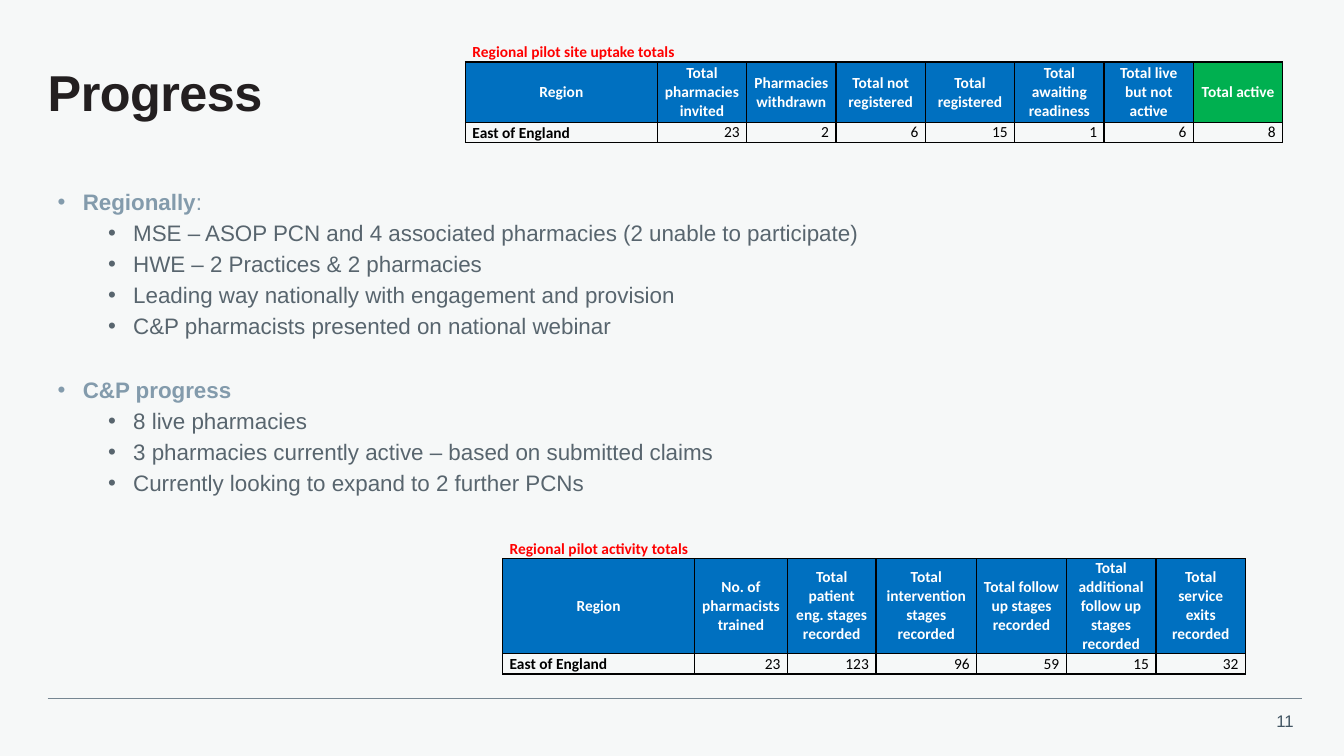
from lxml import etree
from pptx import Presentation, util as u
from pptx.dml.color import RGBColor
from pptx.enum import shapes, text
from pptx.oxml import ns

HUES = {"page": "F6F8F8", "ink": "231F20", "head": "839BAC", "body": "58656E",
        "num": "425563", "rule": "768692", "blue": "0070C0", "green": "00B050",
        "red": "FF0000", "white": "FFFFFF", "black": "000000"}
LEFT, MID, RIGHT = text.PP_ALIGN.LEFT, text.PP_ALIGN.CENTER, text.PP_ALIGN.RIGHT


class Deck:
    """Draws styled elements on one slide, with lengths in percent of its size."""

    def __init__(self, wide, high):
        self.prs = Presentation()
        self.prs.slide_width, self.prs.slide_height = u.Inches(wide), u.Inches(high)
        self.slide = self.prs.slides.add_slide(self.prs.slide_layouts[6])
        self.paint(self.slide.background.fill, "page")

    def col(self, share):
        return round(self.prs.slide_width * share / 100)

    def row(self, share):
        return round(self.prs.slide_height * share / 100)

    def place(self, x, y, w, h):
        return self.col(x), self.row(y), self.col(w), self.row(h)

    def paint(self, fill, hue):
        fill.solid()
        fill.fore_color.rgb = RGBColor.from_string(HUES[hue])

    def style(self, para, size, hue, bold=None, face="Arial", align=LEFT):
        para.alignment = align
        font = para.font
        font.name, font.size, font.bold = face, u.Pt(size), bold
        font.color.rgb = RGBColor.from_string(HUES[hue])

    def frame(self, *area):
        frame = self.slide.shapes.add_textbox(*self.place(*area)).text_frame
        frame.word_wrap = True
        return frame

    def title(self, words, *area):
        frame = self.frame(*area)
        frame.margin_left = frame.margin_right = frame.margin_top = frame.margin_bottom = 0
        frame.vertical_anchor = text.MSO_ANCHOR.MIDDLE
        para = frame.paragraphs[0]
        run = para.add_run()
        run.text = words
        run._r.get_or_add_rPr().set("spc", "-40")
        para.line_spacing = 0.9
        self.style(para, 36, "ink", True)

    def label(self, words, *area):
        para = self.frame(*area).paragraphs[0]
        para.text = words
        self.style(para, 12, "num", align=RIGHT)

    def rule(self, x, y, w):
        line = self.slide.shapes.add_connector(
            shapes.MSO_CONNECTOR.STRAIGHT, *self.place(x, y, x + w, y))
        line.line.width = u.Pt(0.5)
        line.line.color.rgb = RGBColor.from_string(HUES["rule"])
        etree.SubElement(line._element.spPr, ns.qn("a:effectLst"))

    def bullet(self, para, inset):
        props = para._p.get_or_add_pPr()
        props.set("marL", str(u.Inches(inset)))
        props.set("indent", str(u.Inches(-0.25)))
        etree.SubElement(props, ns.qn("a:buFont")).set("typeface", "Arial")
        etree.SubElement(props, ns.qn("a:buChar")).set("char", "•")

    def bullets(self, groups, *area):
        frame = self.frame(*area)
        para = frame.paragraphs[0]
        for spot, (head, tail, items) in enumerate(groups):
            if spot:
                para = frame.add_paragraph()
            para.line_spacing, para.space_before = 0.9, u.Pt(28 if spot else 0)
            self.bullet(para, 0.25)
            self.style(para, 16, "head")
            run = para.add_run()
            run.text, run.font.bold = head, True
            if tail:
                para.add_run().text = tail
            for item in items:
                para = frame.add_paragraph()
                para.text, para.level = item, 1
                para.line_spacing, para.space_before = 0.9, u.Pt(5)
                self.bullet(para, 0.75)
                self.style(para, 16, "body")

    def edge(self, cell, sides):
        props = cell._tc.get_or_add_tcPr()
        for spot, side in enumerate(sides):
            line = etree.Element(ns.qn("a:ln" + side), w=str(u.Pt(1)))
            fill = etree.SubElement(line, ns.qn("a:solidFill"))
            etree.SubElement(fill, ns.qn("a:srgbClr")).set("val", HUES["black"])
            props.insert(spot, line)

    def cell(self, cell, words, hue, fill=None, bold=True, align=LEFT, low=False, sides="LRTB"):
        cell.margin_left = cell.margin_right = u.Inches(0.07)
        cell.margin_top = cell.margin_bottom = 0
        cell.vertical_anchor = text.MSO_ANCHOR.BOTTOM if low else text.MSO_ANCHOR.MIDDLE
        para = cell.text_frame.paragraphs[0]
        para.text = words
        self.style(para, 11, hue, bold, "Calibri", align)
        if fill:
            self.paint(cell.fill, fill)
        else:
            cell.fill.background()
        self.edge(cell, sides)

    def table(self, name, data, x, y, cols, rows, accent=None):
        heads = list(data)
        grid = self.slide.shapes.add_table(
            3, len(cols), *self.place(x, y, sum(cols), sum(rows))).table
        grid.first_row = grid.horz_banding = False
        plain = "{2D5ABB26-0587-4C30-8999-92F81FD0307C}"
        grid._tbl.tblPr.find(ns.qn("a:tableStyleId")).text = plain
        for part, share in zip(grid.columns, cols):
            part.width = self.col(share)
        for part, share in zip(grid.rows, rows):
            part.height = self.row(share)
        for spot, head in enumerate(heads):
            self.cell(grid.cell(0, spot), "" if spot else name, "red", low=True, sides="B")
            self.cell(grid.cell(1, spot), head, "white",
                      "green" if head == accent else "blue", align=MID)
            self.cell(grid.cell(2, spot), str(data[head]), "black", bold=not spot,
                      align=RIGHT if spot else LEFT, low=not spot)
        grid.cell(0, 0).merge(grid.cell(0, len(cols) - 1))


UPTAKE = {"Region": "East of England", "Total pharmacies invited": 23,
          "Pharmacies withdrawn": 2, "Total not registered": 6, "Total registered": 15,
          "Total awaiting readiness": 1, "Total live but not active": 6, "Total active": 8}
ACTIVE = {"Region": "East of England", "No. of pharmacists trained": 23,
          "Total patient eng. stages recorded": 123,
          "Total intervention stages recorded": 96, "Total follow up stages recorded": 59,
          "Total additional follow up stages recorded": 15,
          "Total service exits recorded": 32}
NOTES = [
    ("Regionally", ":", [
        "MSE – ASOP PCN and 4 associated pharmacies (2 unable to participate)",
        "HWE – 2 Practices & 2 pharmacies",
        "Leading way nationally with engagement and provision",
        "C&P pharmacists presented on national webinar"]),
    ("C&P progress", "", [
        "8 live pharmacies",
        "3 pharmacies currently active – based on submitted claims",
        "Currently looking to expand to 2 further PCNs"]),
]


def main():
    deck = Deck(13.33, 7.5)
    deck.label("11", 93.9, 93.3, 3.1, 4)
    deck.rule(3.55, 92.4, 93.3)
    deck.title("Progress", 3.55, 6.25, 93.5, 12.6)
    deck.bullets(NOTES, 3.55, 24.6, 87.3, 42)
    deck.table("Regional pilot site uptake totals", UPTAKE, 34.63, 3.4,
               [14.28] + [6.65] * 7, [4.8, 8, 2.7], "Total active")
    deck.table("Regional pilot activity totals", ACTIVE, 37.4, 71.2,
               [14.28, 6.92, 6.58, 7.5] + [6.67] * 3, [2.7, 12.55, 2.7])
    deck.prs.save("out.pptx")


if __name__ == "__main__":
    main()
